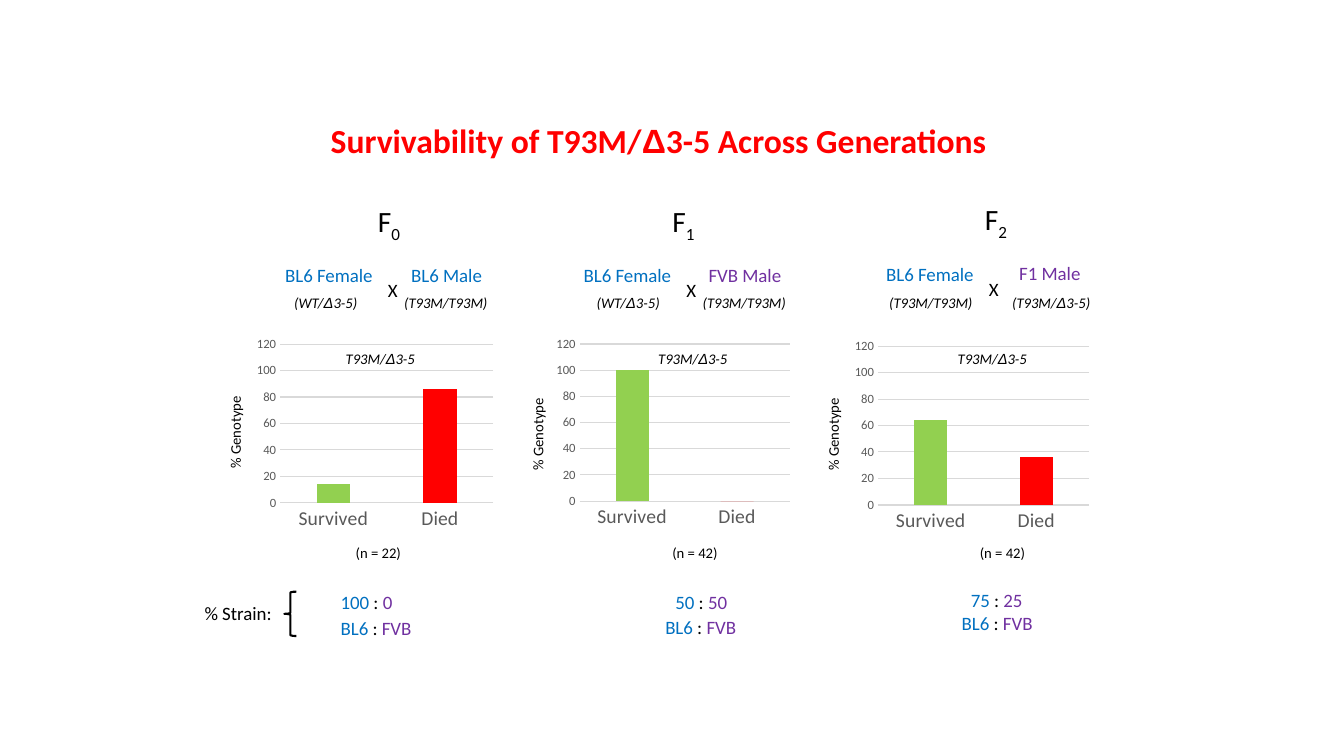
from dataclasses import dataclass
from typing import NamedTuple

from pptx import Presentation
from pptx.chart.data import CategoryChartData
from pptx.dml.color import RGBColor
from pptx.enum.chart import XL_CHART_TYPE, XL_TICK_MARK
from pptx.enum.shapes import MSO_SHAPE
from pptx.enum.text import MSO_ANCHOR, MSO_AUTO_SIZE, PP_ALIGN
from pptx.util import Inches, Pt

COLUMNS = XL_CHART_TYPE.COLUMN_CLUSTERED
NO_TICK = XL_TICK_MARK.NONE
LEFT_BRACE = MSO_SHAPE.LEFT_BRACE
TOP = MSO_ANCHOR.TOP
NO_AUTOFIT = MSO_AUTO_SIZE.NONE
LEFT = PP_ALIGN.LEFT

BLACK = RGBColor(0x00, 0x00, 0x00)
RED = RGBColor(0xFF, 0x00, 0x00)
GREEN = RGBColor(0x92, 0xD0, 0x50)
BLUE = RGBColor(0x00, 0x70, 0xC0)
PURPLE = RGBColor(0x70, 0x30, 0xA0)
AXIS_TEXT = RGBColor(0x59, 0x59, 0x59)
GRID = RGBColor(0xD9, 0xD9, 0xD9)

FONT = "Calibri"
DELTA = "Δ"
DELTA_FONT = "Arial"
SMALL, MEDIUM, LARGE, TITLE = 10.5, 13.5, 21, 24
HEIGHTS = {SMALL: 0.28, MEDIUM: 0.33, LARGE: 0.45, TITLE: 0.5}
SUBSCRIPT = -25000


class Place(NamedTuple):
    left: float
    top: float
    width: float


class Parent(NamedTuple):
    name: str
    genotype: str
    color: RGBColor
    name_place: Place
    genotype_place: Place


@dataclass
class Generation:
    number: str
    female: Parent
    male: Parent
    heading: Place
    cross: Place
    chart: tuple[float, float, float, float]
    survived: int
    died: int
    axis_title: Place
    offspring: Place
    count: str
    count_place: Place
    ratio: tuple[str, str]
    ratio_place: Place
    strain_place: Place


GENERATIONS = [
    Generation(
        "0",
        Parent("BL6 Female", "(WT/Δ3-5)", BLUE, Place(2.73, 2.57, 1.12), Place(2.82, 2.87, 0.84)),
        Parent("BL6 Male", "(T93M/T93M)", BLUE, Place(3.98, 2.57, 0.95), Place(3.91, 2.87, 1.08)),
        heading=Place(3.65, 1.97, 0.44), cross=Place(3.75, 2.72, 0.3),
        chart=(2.5, 3.3, 2.44, 2.01), survived=14, died=86,
        axis_title=Place(1.87, 4.14, 0.93), offspring=Place(3.33, 3.42, 1.05),
        count="(n = 22)", count_place=Place(3.43, 5.35, 0.66),
        ratio=("100", "0"), ratio_place=Place(3.28, 5.81, 0.72),
        strain_place=Place(3.28, 6.07, 0.91),
    ),
    Generation(
        "1",
        Parent("BL6 Female", "(WT/Δ3-5)", BLUE, Place(5.69, 2.57, 1.12), Place(5.82, 2.87, 0.84)),
        Parent("FVB Male", "(T93M/T93M)", PURPLE, Place(6.93, 2.57, 0.96), Place(6.87, 2.87, 1.08)),
        heading=Place(6.57, 1.97, 0.44), cross=Place(6.71, 2.72, 0.3),
        chart=(5.47, 3.3, 2.41, 1.99), survived=100, died=0,
        axis_title=Place(4.87, 4.16, 0.93), offspring=Place(6.43, 3.42, 1.05),
        count="(n = 42)", count_place=Place(6.57, 5.35, 0.66),
        ratio=("50", "50"), ratio_place=Place(6.6, 5.81, 0.72),
        strain_place=Place(6.5, 6.06, 0.91),
    ),
    Generation(
        "2",
        Parent("BL6 Female", "(T93M/T93M)", BLUE, Place(8.69, 2.56, 1.12), Place(8.72, 2.87, 1.08)),
        Parent("F1 Male", "(T93M/Δ3-5)", PURPLE, Place(10.01, 2.55, 0.85), Place(9.94, 2.87, 0.98)),
        heading=Place(9.67, 1.95, 0.44), cross=Place(9.71, 2.71, 0.3),
        chart=(8.43, 3.32, 2.42, 2.01), survived=64, died=36,
        axis_title=Place(7.8, 4.16, 0.93), offspring=Place(9.4, 3.42, 1.05),
        count="(n = 42)", count_place=Place(9.62, 5.35, 0.66),
        ratio=("75", "25"), ratio_place=Place(9.53, 5.79, 0.72),
        strain_place=Place(9.44, 6.02, 0.91),
    ),
]


def add_text(paragraph, text: str, *, size: float = MEDIUM, color: RGBColor = BLACK,
             bold: bool = False, italic: bool = False, baseline: int = 0) -> None:
    for piece in filter(None, text.partition(DELTA)):
        run = paragraph.add_run()
        run.text = piece
        font = run.font
        font.name = DELTA_FONT if piece == DELTA else FONT
        font.size = Pt(size)
        font.bold = bold
        font.italic = italic
        font.color.rgb = color
        if baseline:
            font._element.set("baseline", str(baseline))


def add_box(slide, place: Place, size: float = MEDIUM, rotation: float = 0):
    box = slide.shapes.add_textbox(*map(Inches, (*place, HEIGHTS[size])))
    box.rotation = rotation
    box.text_frame.word_wrap = False
    return box.text_frame.paragraphs[0]


def add_pair(slide, place: Place, pair: tuple[str, str]) -> None:
    paragraph = add_box(slide, place)
    for text, color in zip((pair[0], " : ", pair[1]), (BLUE, BLACK, PURPLE)):
        add_text(paragraph, text, color=color)


def format_axis(axis, size: float) -> None:
    axis.major_tick_mark = axis.minor_tick_mark = NO_TICK
    font = axis.tick_labels.font
    font.name, font.size, font.color.rgb = FONT, Pt(size), AXIS_TEXT


def format_line(line) -> None:
    line.color.rgb = GRID
    line.width = Pt(0.75)


def add_survival_chart(slide, generation: Generation) -> None:
    data = CategoryChartData()
    data.categories = ["Survived", "Died"]
    data.add_series("Series 1", (generation.survived, generation.died))
    chart = slide.shapes.add_chart(COLUMNS, *map(Inches, generation.chart), data).chart
    chart.has_legend = chart.has_title = False
    chart.font.name, chart.font.size, chart.font.color.rgb = FONT, Pt(10), BLACK
    plot = chart.plots[0]
    plot.gap_width, plot.overlap, plot.vary_by_categories = 219, -27, False
    for index, color in enumerate((GREEN, RED)):
        fill = plot.series[0].points[index].format.fill
        fill.solid()
        fill.fore_color.rgb = color
    format_axis(chart.category_axis, 14)
    format_line(chart.category_axis.format.line)
    value_axis = chart.value_axis
    format_axis(value_axis, 9)
    value_axis.minimum_scale, value_axis.maximum_scale, value_axis.major_unit = 0, 120, 20
    value_axis.format.line.fill.background()
    format_line(value_axis.major_gridlines.format.line)


def add_generation(slide, generation: Generation) -> None:
    add_survival_chart(slide, generation)
    heading = add_box(slide, generation.heading, LARGE)
    add_text(heading, "F", size=LARGE)
    add_text(heading, generation.number, size=LARGE, baseline=SUBSCRIPT)
    for parent in (generation.female, generation.male):
        add_text(add_box(slide, parent.name_place), parent.name, color=parent.color)
        add_text(add_box(slide, parent.genotype_place, SMALL), parent.genotype, size=SMALL, italic=True)
    add_text(add_box(slide, generation.cross), "X")
    add_text(add_box(slide, generation.axis_title, SMALL, 270), "% Genotype", size=SMALL)
    add_text(add_box(slide, generation.offspring, SMALL), "T93M/Δ3-5", size=SMALL, italic=True)
    add_text(add_box(slide, generation.count_place, SMALL), generation.count, size=SMALL)
    add_pair(slide, generation.ratio_place, generation.ratio)
    add_pair(slide, generation.strain_place, ("BL6", "FVB"))


def add_title(slide) -> None:
    title = slide.shapes.title
    title.left, title.top, title.width, title.height = map(Inches, (3.18, 1.14, 6.73, HEIGHTS[TITLE]))
    frame = title.text_frame
    frame.word_wrap, frame.auto_size, frame.vertical_anchor = False, NO_AUTOFIT, TOP
    paragraph = frame.paragraphs[0]
    paragraph.alignment = LEFT
    add_text(paragraph, "Survivability of T93M/Δ3-5 Across Generations", size=TITLE, color=RED, bold=True)


def add_strain_label(slide) -> None:
    add_text(add_box(slide, Place(1.93, 5.92, 0.92)), "% Strain:")
    brace = slide.shapes.add_shape(LEFT_BRACE, *map(Inches, (2.82, 5.87, 0.12, 0.44)))
    brace.shadow.inherit = False
    brace.fill.background()
    brace.line.color.rgb = BLACK
    brace.line.width = Pt(1.5)


def main() -> None:
    presentation = Presentation()
    presentation.slide_width, presentation.slide_height = Inches(13.33), Inches(7.5)
    slide = presentation.slides.add_slide(presentation.slide_layouts[5])
    add_title(slide)
    for generation in GENERATIONS:
        add_generation(slide, generation)
    add_strain_label(slide)
    presentation.save("out.pptx")


if __name__ == "__main__":
    main()
